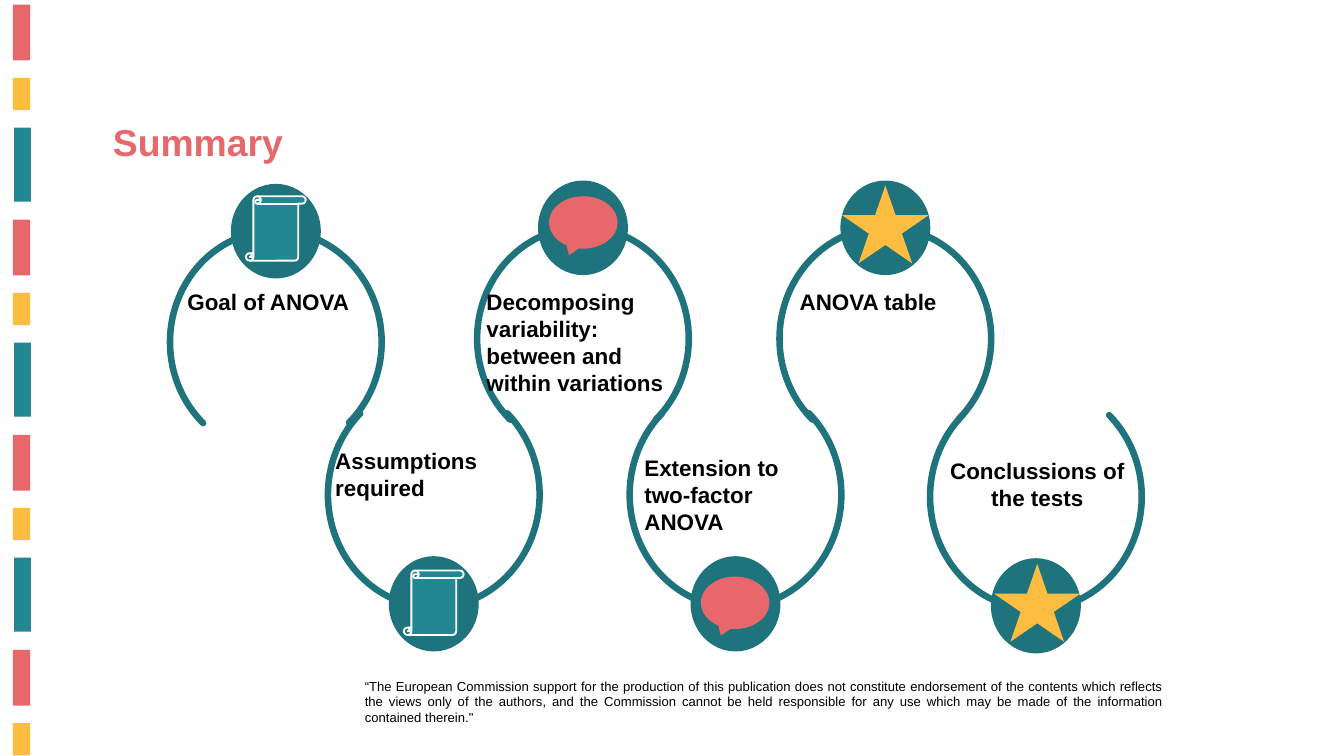
from dataclasses import dataclass
from itertools import product

import pptx
import pptx.dml.color
import pptx.enum.shapes
import pptx.enum.text
import pptx.oxml
import pptx.oxml.ns
import pptx.util

Inches = pptx.util.Inches
Color = pptx.dml.color.RGBColor
ShapeKind = pptx.enum.shapes.MSO_SHAPE
Align = pptx.enum.text.PP_ALIGN

CORAL = Color(0xE8, 0x67, 0x6A)
TITLE_CORAL = Color(0xE7, 0x68, 0x6A)
YELLOW = Color(0xFD, 0xBD, 0x40)
TEAL = Color(0x23, 0x87, 0x91)
DARK_TEAL = Color(0x1E, 0x73, 0x7C)
WHITE = Color(0xFF, 0xFF, 0xFF)
BLACK = Color(0, 0, 0)

STRIPE_PERIOD = 3.2
SLIDE_HEIGHT = 11.25
ARC_WIDTH = 3.15
DISC_WIDTH = 1.31
DISC_OFFSET = 0.92


@dataclass(frozen=True)
class Box:
    left: float
    top: float
    width: float
    height: float

    def lengths(self) -> list:
        return [Inches(value) for value in (self.left, self.top, self.width, self.height)]


@dataclass(frozen=True)
class Icon:
    kind: ShapeKind
    width: float
    height: float
    fill: Color
    outline: Color | None = None


@dataclass(frozen=True)
class Step:
    text: str
    label: Box
    arc_left: float
    arc_top: float
    hanging: bool
    icon: Icon
    icon_left: float
    icon_top: float
    align: Align = Align.LEFT


SCROLL = Icon(ShapeKind.VERTICAL_SCROLL, 0.89, 0.96, TEAL, WHITE)
CALLOUT = Icon(ShapeKind.OVAL_CALLOUT, 1.02, 0.78, CORAL)
STAR = Icon(ShapeKind.STAR_5_POINT, 1.29, 1.16, YELLOW)

STRIPES = (
    (Box(0.19, 0.07, 0.26, 0.83), CORAL),
    (Box(0.19, 1.16, 0.26, 0.48), YELLOW),
    (Box(0.21, 1.9, 0.25, 1.1), TEAL),
)

STEPS = (
    Step("Goal of ANOVA", Box(2.69, 4.24, 2.9, 0.91), 2.53, 3.43, False, SCROLL, 3.66, 2.92),
    Step("Assumptions required", Box(4.89, 6.61, 3.08, 1.31), 4.88, 5.68, True, SCROLL, 6.01, 8.49),
    Step("Decomposing variability: between and within variations",
         Box(7.14, 4.24, 3.08, 2.12), 7.1, 3.38, False, CALLOUT, 8.17, 2.92),
    Step("Extension to two-factor ANOVA", Box(9.49, 6.71, 2.9, 1.72),
         9.37, 5.68, True, CALLOUT, 10.43, 8.58),
    Step("ANOVA table", Box(11.8, 4.24, 2.75, 0.91), 11.6, 3.38, False, STAR, 12.53, 2.76),
    Step("Conclussions of the tests", Box(13.89, 6.75, 3.09, 0.91),
         13.84, 5.71, True, STAR, 14.79, 8.39, Align.CENTER),
)

DISCLAIMER = (
    "“The European Commission support for the production of this publication does not "
    "constitute endorsement of the contents which reflects the views only of the authors, "
    "and the Commission cannot be held responsible for any use which may be made of the "
    "information contained therein.\""
)


def add_figure(shapes, kind: ShapeKind, box: Box, fill: Color | None = None,
               outline: Color | None = None, line_width: float = 2):
    shape = shapes.add_shape(kind, *box.lengths())
    shape.shadow.inherit = False
    if fill is None:
        shape.fill.background()
    else:
        shape.fill.solid()
        shape.fill.fore_color.rgb = fill
    if outline is None:
        shape.line.fill.background()
    else:
        shape.line.color.rgb = outline
        shape.line.width = pptx.util.Pt(line_width)
    return shape


def write_text(shape, text: str, size: float, color: Color = BLACK,
               bold: bool = True, align: Align = Align.LEFT) -> None:
    frame = shape.text_frame
    frame_format = {
        "word_wrap": True,
        "auto_size": pptx.enum.text.MSO_AUTO_SIZE.NONE,
        "vertical_anchor": pptx.enum.text.MSO_ANCHOR.TOP,
        "margin_left": Inches(0.1),
        "margin_right": Inches(0.1),
        "margin_top": Inches(0.05),
        "margin_bottom": Inches(0.05),
    }
    for name, value in frame_format.items():
        setattr(frame, name, value)
    frame.text = text
    paragraph = frame.paragraphs[0]
    paragraph.alignment = align
    font_format = {"name": "Arial", "size": pptx.util.Pt(size), "bold": bold}
    for name, value in font_format.items():
        setattr(paragraph.runs[0].font, name, value)
    paragraph.runs[0].font.color.rgb = color


def add_stripes(slide) -> None:
    for repeat, (box, color) in product(range(4), STRIPES):
        top = box.top + repeat * STRIPE_PERIOD
        if top < SLIDE_HEIGHT:
            stripe = Box(box.left, top, box.width, box.height)
            add_figure(slide.shapes, ShapeKind.RECTANGLE, stripe, color)


def add_loop(slide, step: Step) -> None:
    group = slide.shapes.add_group_shape()
    arc_height, disc_height, disc_drop = (3.36, 1.39, 2.61) if step.hanging else (3.32, 1.38, -0.68)
    arc = add_figure(group.shapes, ShapeKind.ARC,
                     Box(step.arc_left, step.arc_top, ARC_WIDTH, arc_height),
                     outline=DARK_TEAL, line_width=7)
    arc.adjustments[0] = 79.141
    arc.adjustments[1] = 28.684
    arc.rotation = 180 if step.hanging else 0
    arc.element.spPr.find(pptx.oxml.ns.qn("a:ln")).set("cap", "rnd")
    disc = Box(step.arc_left + DISC_OFFSET, step.arc_top + disc_drop, DISC_WIDTH, disc_height)
    add_figure(group.shapes, ShapeKind.OVAL, disc, DARK_TEAL, DARK_TEAL)


def add_icon(slide, step: Step) -> None:
    icon = step.icon
    box = Box(step.icon_left, step.icon_top, icon.width, icon.height)
    add_figure(slide.shapes, icon.kind, box, icon.fill, icon.outline)


def add_label(slide, step: Step) -> None:
    label = slide.shapes.add_textbox(*step.label.lengths())
    write_text(label, step.text, 24, align=step.align)


def main() -> None:
    presentation = pptx.Presentation()
    presentation.slide_width = Inches(20)
    presentation.slide_height = Inches(SLIDE_HEIGHT)
    slide = presentation.slides.add_slide(presentation.slide_layouts[5])

    add_stripes(slide)
    title = slide.shapes.title
    title_box = Box(1.58, 1.72, 6.58, 0.77)
    for name, value in zip(("left", "top", "width", "height"), title_box.lengths()):
        setattr(title, name, value)
    write_text(title, "Summary", 40, TITLE_CORAL)

    disclaimer = slide.shapes.add_textbox(*Box(5.33, 10.04, 12.08, 0.81).lengths())
    write_text(disclaimer, DISCLAIMER, 14, bold=False, align=Align.JUSTIFY)

    for draw in (add_loop, add_label, add_icon):
        for step in STEPS:
            draw(slide, step)

    presentation.save("out.pptx")


if __name__ == "__main__":
    main()
